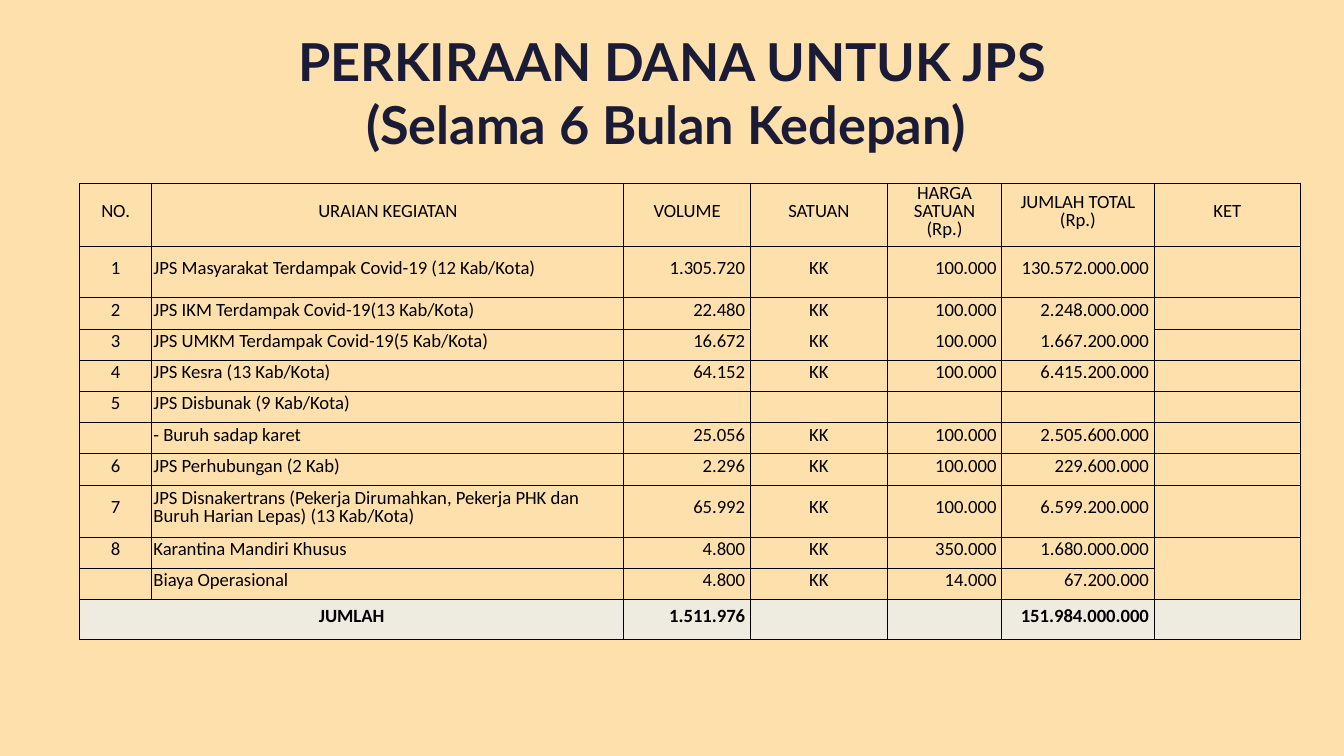
from dataclasses import dataclass

import lxml.etree
import pptx
import pptx.dml.color
import pptx.enum.text
import pptx.oxml.ns
import pptx.table
import pptx.util

Cm = pptx.util.Cm
Pt = pptx.util.Pt
Align = pptx.enum.text.PP_ALIGN
Anchor = pptx.enum.text.MSO_ANCHOR
qn = pptx.oxml.ns.qn

COLOURS = {"page": "FDE0AC", "title": "1A1B36", "ink": "000000", "total": "EEECE1"}


@dataclass
class Column:
    heading: str
    width: float
    align: Align
    right_margin: float = 0.03


@dataclass
class Activity:
    number: str
    name: str
    volume: str = ""
    unit: str = "KK"
    price: str = "100.000"
    total: str = ""
    height: float = 0.59

    def texts(self) -> list[str]:
        return [self.number, self.name, self.volume, self.unit, self.price, self.total, ""]


COLUMNS = [
    Column("NO.", 1.37, Align.CENTER),
    Column("URAIAN KEGIATAN", 8.92, Align.LEFT),
    Column("VOLUME", 2.39, Align.RIGHT, 0.1),
    Column("SATUAN", 2.59, Align.CENTER),
    Column("HARGA SATUAN\n(Rp.)", 2.16, Align.RIGHT, 0.1),
    Column("JUMLAH TOTAL (Rp.)", 2.88, Align.RIGHT, 0.1),
    Column("KET", 2.77, Align.CENTER),
]
ACTIVITIES = [
    Activity("1", "JPS Masyarakat Terdampak Covid-19 (12 Kab/Kota)", "1.305.720",
             total="130.572.000.000", height=0.98),
    Activity("2", "JPS IKM Terdampak Covid-19(13 Kab/Kota)", "22.480", total="2.248.000.000"),
    Activity("3", "JPS UMKM Terdampak Covid-19(5 Kab/Kota)", "16.672", total="1.667.200.000"),
    Activity("4", "JPS Kesra (13 Kab/Kota)", "64.152", total="6.415.200.000"),
    Activity("5", "JPS Disbunak (9 Kab/Kota)", unit="", price=""),
    Activity("", "- Buruh sadap karet", "25.056", total="2.505.600.000"),
    Activity("6", "JPS Perhubungan (2 Kab)", "2.296", total="229.600.000"),
    Activity("7", "JPS Disnakertrans (Pekerja Dirumahkan, Pekerja PHK dan "
             "Buruh Harian Lepas) (13 Kab/Kota)", "65.992", total="6.599.200.000", height=0.98),
    Activity("8", "Karantina Mandiri Khusus", "4.800", price="350.000", total="1.680.000.000"),
    Activity("", "Biaya Operasional", "4.800", price="14.000", total="67.200.000"),
]
HEADER_HEIGHT = 1.19
TOTAL_HEIGHT = 0.76
TOTALS = ["JUMLAH", "", "1.511.976", "", "", "151.984.000.000", ""]
# Cells (row, column) with no line between them and the cell below
OPEN_BELOW = {(2, 3), (2, 4), (2, 5), (9, 6)}


def rgb(name: str) -> pptx.dml.color.RGBColor:
    return pptx.dml.color.RGBColor.from_string(COLOURS[name])


def apply(target: object, values: dict) -> None:
    for name, value in values.items():
        setattr(target, name, value)


def style_font(font, size: float, face: str, colour: str, bold: bool) -> None:
    apply(font, {"size": Pt(size), "name": face, "bold": bold})
    font.color.rgb = rgb(colour)


def draw_borders(cell: pptx.table._Cell, row: int, column: int) -> None:
    properties = cell._tc.get_or_add_tcPr()
    hidden = set()
    if (row, column) in OPEN_BELOW:
        hidden.add("lnB")
    if (row - 1, column) in OPEN_BELOW:
        hidden.add("lnT")
    for side in ("lnL", "lnR", "lnT", "lnB"):
        line = lxml.etree.SubElement(properties, qn(f"a:{side}"), w=str(Pt(0.5)))
        if side in hidden:
            lxml.etree.SubElement(line, qn("a:noFill"))
        else:
            fill = lxml.etree.SubElement(line, qn("a:solidFill"))
            lxml.etree.SubElement(fill, qn("a:srgbClr"), val=COLOURS["ink"])


def write_cell(cell: pptx.table._Cell, text: str, align: Align,
               right_margin: float, bold: bool) -> None:
    apply(cell, {
        "margin_left": Cm(0.03), "margin_top": Cm(0.03),
        "margin_right": Cm(right_margin), "margin_bottom": Cm(0.13),
        "vertical_anchor": Anchor.MIDDLE,
    })
    cell.text = text
    for para in cell.text_frame.paragraphs:
        apply(para, {"alignment": align, "line_spacing": 0.8})
        for span in para.runs:
            style_font(span.font, 10, "Calibri", "ink", bold)
        if not para.runs:  # keeps empty rows from growing
            lxml.etree.SubElement(para._p, qn("a:endParaRPr"), sz="1000")


def draw_title(page) -> None:
    box = page.shapes.add_textbox(Cm(2.39), Cm(0.3), Cm(20.62), Cm(2.46))
    margins = ("margin_left", "margin_top", "margin_right", "margin_bottom")
    apply(box.text_frame, {"word_wrap": True, "vertical_anchor": Anchor.TOP,
                           **dict.fromkeys(margins, Cm(0.25))})
    para = box.text_frame.paragraphs[0]
    para.text = "PERKIRAAN DANA UNTUK JPS\v(Selama 6 Bulan Kedepan) "
    para.alignment = Align.CENTER
    for span in para.runs:
        style_font(span.font, 28, "Lato", "title", True)


def draw_table(page) -> None:
    rows = [[column.heading for column in COLUMNS],
            *(activity.texts() for activity in ACTIVITIES), TOTALS]
    heights = [HEADER_HEIGHT, *(activity.height for activity in ACTIVITIES), TOTAL_HEIGHT]
    last = len(rows) - 1
    frame = page.shapes.add_table(
        len(rows), len(COLUMNS), Cm(1.5), Cm(3.46),
        Cm(sum(column.width for column in COLUMNS)), Cm(sum(heights)))
    table = frame.table
    apply(table, {"first_row": False, "horz_banding": False})
    for index, column in enumerate(COLUMNS):
        table.columns[index].width = Cm(column.width)
    for index, height in enumerate(heights):
        table.rows[index].height = Cm(height)
    table.cell(last, 0).merge(table.cell(last, 1))

    for row, texts in enumerate(rows):
        for index, (column, text) in enumerate(zip(COLUMNS, texts)):
            cell = table.cell(row, index)
            header = row == 0
            write_cell(cell, text, Align.CENTER if header else column.align,
                       0.03 if header else column.right_margin, row == last)
            draw_borders(cell, row, index)
            if row == last:
                cell.fill.solid()
                cell.fill.fore_color.rgb = rgb("total")
            else:
                cell.fill.background()


def main() -> None:
    deck = pptx.Presentation()
    apply(deck, {"slide_width": Cm(25.4), "slide_height": Cm(14.29)})
    page = deck.slides.add_slide(deck.slide_layouts[6])
    page.background.fill.solid()
    page.background.fill.fore_color.rgb = rgb("page")
    draw_title(page)
    draw_table(page)
    deck.save("out.pptx")


if __name__ == "__main__":
    main()
